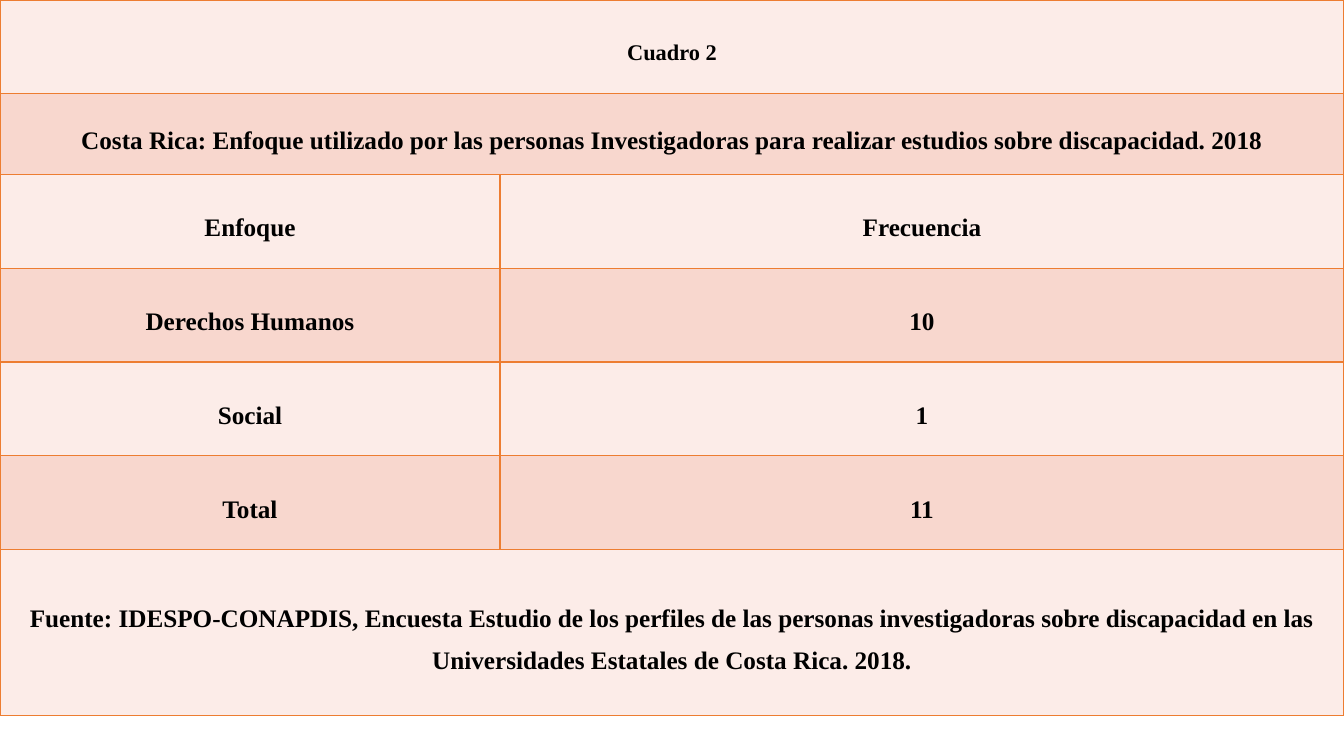
from lxml.etree import SubElement
from pptx import Presentation
from pptx.dml.color import RGBColor
from pptx.enum.text import MSO_ANCHOR, PP_ALIGN
from pptx.oxml.ns import qn
from pptx.util import Inches, Pt

WIDE, HIGH = Inches(13.33), Inches(7.5)
COLS = [0.372, 0.628]
ROWS = [0.124, 0.107, 0.124, 0.124, 0.124, 0.124, 0.22]
BANDS = ["FCECE8", "F8D7CE"]
EDGE, INK = "ED7D31", "000000"
FONT = "Times New Roman"
TEXTS = [
    ["Cuadro 2"],
    ["Costa Rica: Enfoque utilizado por las personas Investigadoras "
     "para realizar estudios sobre discapacidad. 2018"],
    ["Enfoque", "Frecuencia"],
    ["Derechos Humanos", "10"],
    ["Social", "1"],
    ["Total", "11"],
    ["Fuente: IDESPO-CONAPDIS, Encuesta Estudio de los perfiles de las "
     "personas investigadoras sobre discapacidad en las Universidades "
     "Estatales de Costa Rica. 2018."],
]


def paint(color, code):
    color.rgb = RGBColor.from_string(code)


def frame(cell):
    props = cell._tc.get_or_add_tcPr()
    for side in ("a:lnL", "a:lnR", "a:lnT", "a:lnB"):
        line = SubElement(props, qn(side), w=str(Pt(1)))
        fill = SubElement(line, qn("a:solidFill"))
        SubElement(fill, qn("a:srgbClr"), val=EDGE)


def style(cell, band):
    frame(cell)
    cell.fill.solid()
    paint(cell.fill.fore_color, band)
    cell.vertical_anchor = MSO_ANCHOR.MIDDLE
    cell.margin_left = cell.margin_right = Inches(0.05)
    cell.margin_top = cell.margin_bottom = 0


def write(cell, text, size):
    cell.text_frame.text = text
    para = cell.text_frame.paragraphs[0]
    para.alignment = PP_ALIGN.CENTER
    para.line_spacing = 1.5
    para.space_after = Pt(10)
    font = para.runs[0].font
    font.name, font.size, font.bold = FONT, Pt(size), True
    paint(font.color, INK)


def build(slide):
    shape = slide.shapes.add_table(
        len(ROWS), len(COLS), 0, 0, WIDE, int(HIGH * sum(ROWS)))
    shape.name = "Cuadro 2"
    table = shape.table
    for col, share in zip(table.columns, COLS):
        col.width = int(WIDE * share)
    for row, share in zip(table.rows, ROWS):
        row.height = int(HIGH * share)
    for num, texts in enumerate(TEXTS):
        cells = list(table.rows[num].cells)
        for cell in cells:
            style(cell, BANDS[num % 2])
        if len(texts) == 1:
            cells[0].merge(cells[-1])
        for cell, text in zip(cells, texts):
            write(cell, text, 18 if num else 16)


def main():
    deck = Presentation()
    deck.slide_width, deck.slide_height = WIDE, HIGH
    build(deck.slides.add_slide(deck.slide_layouts[6]))
    deck.save("out.pptx")


if __name__ == "__main__":
    main()
